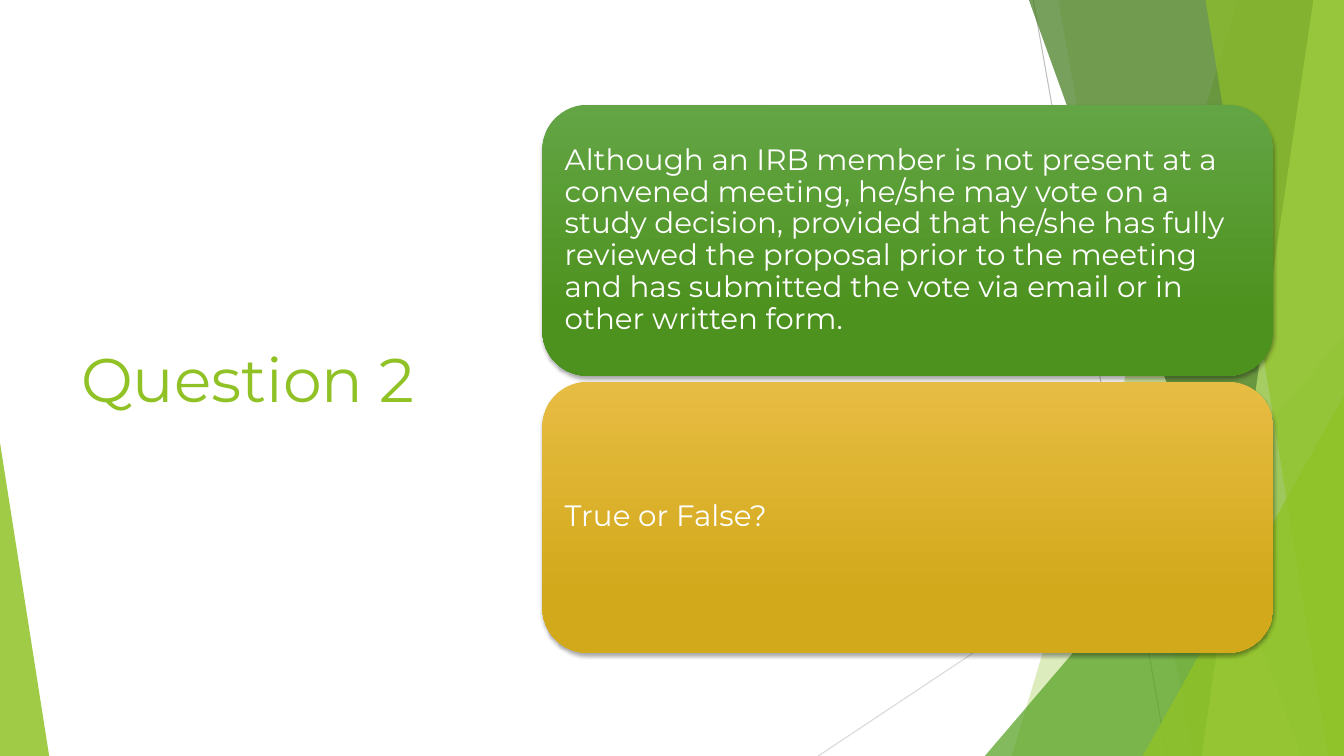
from dataclasses import dataclass

from lxml import etree
from pptx import Presentation
from pptx import util as u
from pptx.dml.color import RGBColor
from pptx.enum import shapes, text
from pptx.oxml import ns


@dataclass(frozen=True)
class Theme:
    font: str = "Montserrat"
    title_size: int = 44
    card_size: int = 21
    lime: str = "90C226"
    pale_lime: str = "C0E474"
    green: str = "54A021"
    dark_green: str = "3F7819"
    white: str = "FFFFFF"
    shadow: str = "000000"
    line_greys: tuple = ("BFBFBF", "D9D9D9")
    green_card: tuple = ("63A545", "4D921E")
    gold_card: tuple = ("E7BC43", "D2A91B")


def add_alpha(color, percent):
    etree.SubElement(color, ns.qn("a:alpha"), val=str(percent * 1000))


def write(tf, words, size, color):
    tf.word_wrap = True
    tf.vertical_anchor = text.MSO_ANCHOR.MIDDLE
    p = tf.paragraphs[0]
    p.alignment = text.PP_ALIGN.LEFT
    r = p.add_run()
    r.text = words
    r.font.name = theme.font
    r.font.size = u.Pt(size)
    r.font.color.rgb = RGBColor.from_string(color)
    return p


theme = Theme()
W, H = 33.87, 19.05
prs = Presentation()
prs.slide_width, prs.slide_height = u.Cm(W), u.Cm(H)
s = prs.slides.add_slide(prs.slide_layouts[6])

# Thin background lines
line_ends = [(26.04, 0, 29.41, H), (W, 10.24, 20.62, H)]
for ends, grey in zip(line_ends, theme.line_greys):
    line = s.shapes.add_connector(shapes.MSO_CONNECTOR.STRAIGHT, *map(u.Cm, ends))
    line.line.color.rgb = RGBColor.from_string(grey)
    line.line.width = u.Pt(0.75)
    etree.SubElement(line._element.spPr, ns.qn("a:effectLst"))

# Facets, back to front: bands hold top x and bottom x,
# triangles hold left, top, width and apex position
facets = [
    ("band", (31.19, 25.5), theme.lime, 30),
    ("band", (26.67, 30.05), theme.lime, 20),
    ("triangle", (24.82, 8.46, W - 24.82, 1), theme.green, 72),
    ("band", (25.93, 32.79), theme.dark_green, 70),
    ("band", (33.1, 30.28), theme.pale_lime, 70),
    ("band", (30.38, 33.48), theme.lime, 65),
    ("triangle", (28.8, 9.98, W - 28.8, 1), theme.lime, 80),
    ("triangle", (0, 11.15, 1.24, 0), theme.lime, 85),
]
for kind, place, color, opacity in facets:
    if kind == "band":
        top_x, bottom_x = place
        outline = s.shapes.build_freeform(u.Cm(top_x), 0)
        corners = [(W, 0), (W, H), (bottom_x, H)]
        outline.add_line_segments([(u.Cm(x), u.Cm(y)) for x, y in corners])
        sp = outline.convert_to_shape()
    else:
        left, top, width, apex = place
        sp = s.shapes.add_shape(shapes.MSO_SHAPE.ISOSCELES_TRIANGLE, u.Cm(left),
                                u.Cm(top), u.Cm(width), u.Cm(H - top))
        sp.adjustments[0] = apex
    sp.shadow.inherit = False
    sp.line.fill.background()
    sp.fill.solid()
    sp.fill.fore_color.rgb = RGBColor.from_string(color)
    add_alpha(sp._element.spPr.find(ns.qn("a:solidFill"))[0], opacity)

# Title
title = s.shapes.add_textbox(u.Cm(1.8), u.Cm(3.84), u.Cm(9.86), u.Cm(11.38))
write(title.text_frame, "Question 2", theme.title_size, theme.lime)

# Question and answer cards
cards = [
    ("Although an IRB member is not present at a convened meeting, he/she may "
     "vote on a study decision, provided that he/she has fully reviewed the "
     "proposal prior to the meeting and has submitted the vote via email or in "
     "other written form.", theme.green_card),
    ("True or False?", theme.gold_card),
]
for i, (words, colors) in enumerate(cards):
    card = s.shapes.add_shape(shapes.MSO_SHAPE.ROUNDED_RECTANGLE, u.Cm(13.67),
                              u.Cm(2.64 + 6.98 * i), u.Cm(18.42), u.Cm(6.83))
    card.line.fill.background()
    card.fill.gradient()
    card.fill.gradient_angle = 270
    for stop, position, color in zip(card.fill.gradient_stops, (0, 0.78), colors):
        stop.position = position
        stop.color.rgb = RGBColor.from_string(color)

    # Soft shadow below the card
    card.shadow.inherit = False
    effects = card._element.spPr.find(ns.qn("a:effectLst"))
    shadow = etree.SubElement(effects, ns.qn("a:outerShdw"), blurRad=str(u.Pt(3)),
                              dist=str(u.Pt(2)), dir="5400000", rotWithShape="0")
    add_alpha(etree.SubElement(shadow, ns.qn("a:srgbClr"), val=theme.shadow), 35)

    tf = card.text_frame
    tf.margin_left = tf.margin_right = tf.margin_top = tf.margin_bottom = u.Cm(0.23)
    p = write(tf, words, theme.card_size, theme.white)
    p.line_spacing = 0.9

prs.save("out.pptx")
